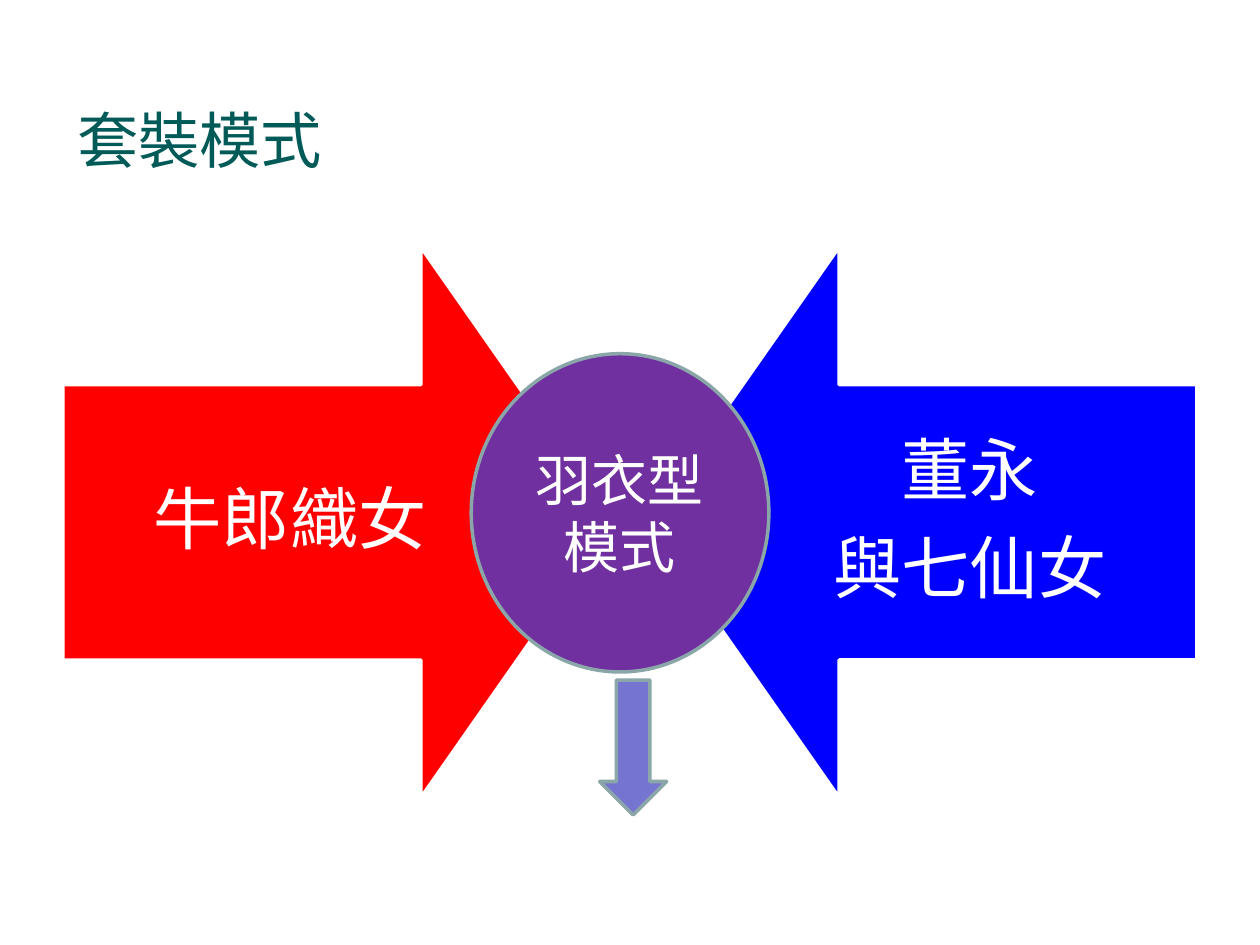
from pptx import Presentation
from pptx.dml.color import RGBColor
from pptx.enum.shapes import MSO_SHAPE as Preset
from pptx.enum.text import MSO_ANCHOR as Anchor, PP_ALIGN as Align
from pptx.util import Cm, Pt

TEAL = RGBColor(0x00, 0x5A, 0x58)
RED = RGBColor(0xFF, 0x00, 0x00)
BLUE = RGBColor(0x00, 0x00, 0xFF)
PURPLE = RGBColor(0x70, 0x30, 0xA0)
LAVENDER = RGBColor(0x75, 0x75, 0xD1)
GREY_GREEN = RGBColor(0x8A, 0xA6, 0xA8)
WHITE = RGBColor(0xFF, 0xFF, 0xFF)


def write(frame, lines, size, color, align):
    frame.word_wrap = True
    frame.vertical_anchor = Anchor.MIDDLE
    for index, line in enumerate(lines):
        paragraph = frame.add_paragraph() if index else frame.paragraphs[0]
        paragraph.alignment = align
        run = paragraph.add_run()
        run.text = line
        run.font.name = "Arial"
        run.font.size = Pt(size)
        run.font.color.rgb = color


def add_filled(slide, preset, box, fill, line):
    shape = slide.shapes.add_shape(preset, *map(Cm, box))
    shape.shadow.inherit = False
    shape.fill.solid()
    shape.fill.fore_color.rgb = fill
    shape.line.color.rgb = line
    shape.line.width = Pt(2)
    return shape


def place_title(slide, box, text):
    title = slide.shapes.title
    title.left, title.top, title.width, title.height = map(Cm, box)
    write(title.text_frame, [text], 35, TEAL, Align.LEFT)


def add_story_arrow(slide, box, lines, fill, points_right):
    left, top, side, _ = box
    arrow = add_filled(slide, Preset.DOWN_ARROW, box, fill, WHITE)
    arrow.adjustments[0] = 0.5
    arrow.adjustments[1] = 0.35
    arrow.rotation = 270 if points_right else 90

    label_width = side * 0.825
    label_left = left if points_right else left + side - label_width
    label_box = label_left, top + side / 4, label_width, side / 2
    frame = slide.shapes.add_textbox(*map(Cm, label_box)).text_frame
    frame.margin_left = frame.margin_right = Cm(0.76)
    frame.margin_top = frame.margin_bottom = Cm(0.76)
    write(frame, lines, 39, WHITE, Align.CENTER)
    for paragraph in frame.paragraphs:
        paragraph.line_spacing = 0.9
        paragraph.space_after = Pt(13.65)


def add_shared_pattern(slide, box, text):
    left, top, width, height = box
    circle_box = left, top, width, height * 0.69
    circle = add_filled(slide, Preset.OVAL, circle_box, PURPLE, GREY_GREEN)
    write(circle.text_frame, [text], 32, WHITE, Align.CENTER)

    arrow_width, arrow_height = 1.35, 2.72
    arrow_box = (left + 2.59, top + height - arrow_height,
                 arrow_width, arrow_height)
    add_filled(slide, Preset.DOWN_ARROW, arrow_box, LAVENDER, GREY_GREEN)


def main():
    presentation = Presentation()
    presentation.slide_width = Cm(25.4)
    presentation.slide_height = Cm(19.05)
    slide = presentation.slides.add_slide(presentation.slide_layouts[5])

    place_title(slide, (1.3, 1.93, 22.86, 1.75), "套裝模式")
    margin, top, side = 1.27, 4.98, 11.1
    right_left = 25.4 - margin - side
    add_story_arrow(slide, (margin, top, side, side), ["牛郎織女"], RED, True)
    add_story_arrow(slide, (right_left, top, side, side),
                    ["董永", "與七仙女"], BLUE, False)
    add_shared_pattern(slide, (9.5, 7.13, 6, 9.3), "羽衣型模式")
    presentation.save("out.pptx")


if __name__ == "__main__":
    main()
